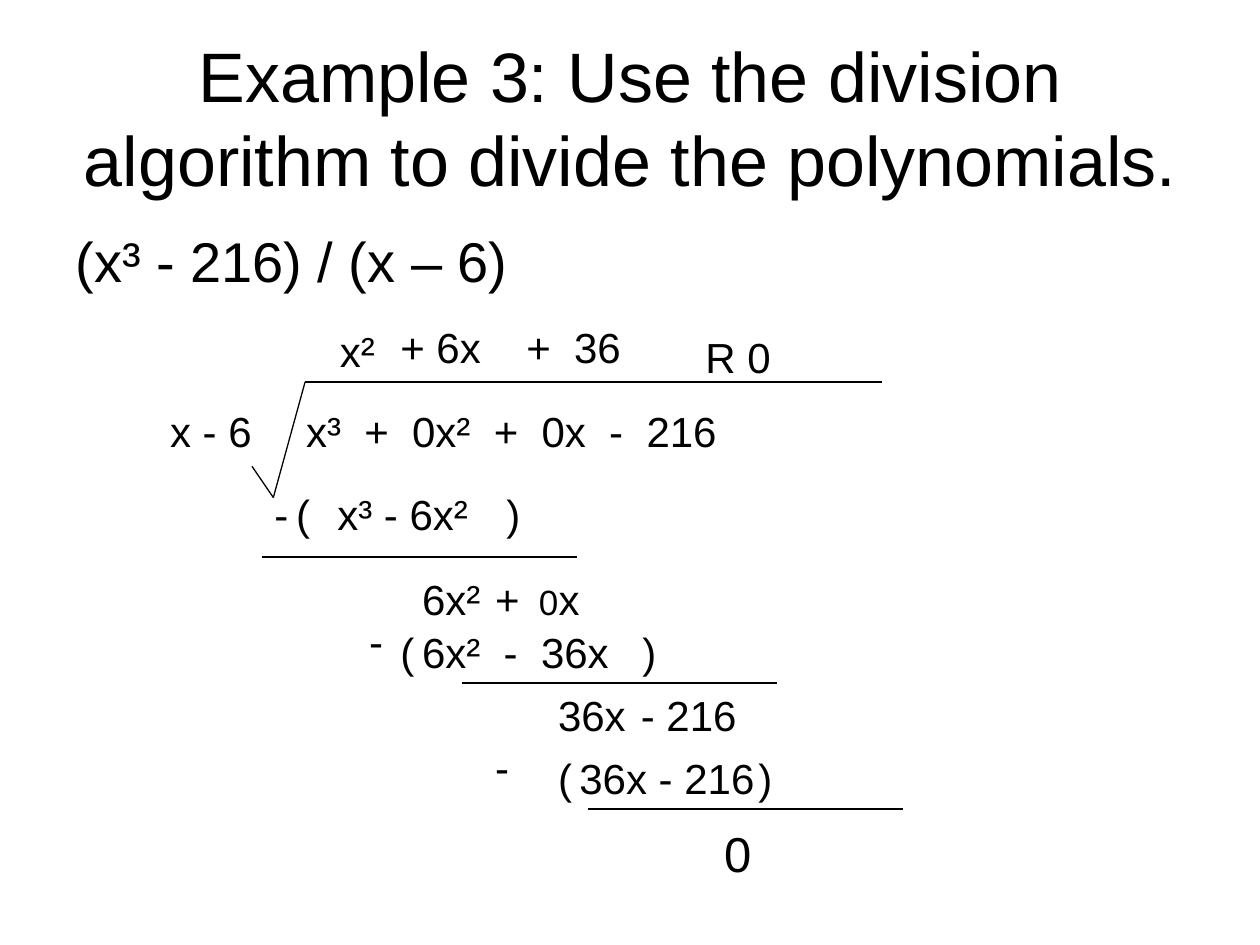
from pptx import Presentation
from pptx import util as u
from pptx.dml.color import RGBColor
from pptx.enum import shapes, text
from pptx.oxml.ns import qn
from lxml import etree


def color(value):
    return RGBColor.from_string(value)


class Board:
    font = "Arial"
    ink = "000000"
    size = 24
    line_width = 0.75

    def __init__(self, slide):
        self.s = slide

    def label(self, x, y, w, h, runs, wrap=False, align=text.PP_ALIGN.LEFT,
              anchor=text.MSO_ANCHOR.TOP, before=0):
        sp = self.s.shapes.add_textbox(u.Cm(x), u.Cm(y), u.Cm(w), u.Cm(h))
        tf = sp.text_frame
        tf.word_wrap = wrap
        tf.vertical_anchor = anchor
        if not wrap:
            tf.auto_size = text.MSO_AUTO_SIZE.SHAPE_TO_FIT_TEXT
        p = tf.paragraphs[0]
        p.alignment = align
        p.space_before = u.Pt(before)
        for words, size in runs:
            r = p.add_run()
            r.text = words
            r.font.name = self.font
            r.font.size = u.Pt(size)
            r.font.color.rgb = color(self.ink)

    def term(self, x, y, w, words):
        self.label(x, y, w, 1.27, [(words, self.size)])

    def line(self, x1, y1, x2, y2):
        c = self.s.shapes.add_connector(
            shapes.MSO_CONNECTOR.STRAIGHT,
            u.Cm(x1), u.Cm(y1), u.Cm(x2), u.Cm(y2))
        c.line.color.rgb = color(self.ink)
        c.line.width = u.Pt(self.line_width)
        etree.SubElement(c._element.spPr, qn("a:effectLst"))

    def subtraction(self, y, minus, opening, product, closing, rule):
        minus_x, minus_y = minus
        self.term(minus_x, minus_y, 0.79, "-")
        self.term(opening, y, 0.79, "(")
        x, w, words = product
        self.term(x, y, w, words)
        self.term(closing, y, 0.79, ")")
        rule_x, rule_y = rule
        self.line(rule_x, rule_y, rule_x + 6.35, rule_y)


def main():
    prs = Presentation()
    prs.slide_width, prs.slide_height = u.Cm(25.4), u.Cm(19.05)
    b = Board(prs.slides.add_slide(prs.slide_layouts[6]))

    b.label(1.27, 0.76, 22.86, 3.18,
            [("Example 3: Use the division algorithm to divide the polynomials.", 40)],
            wrap=True, align=text.PP_ALIGN.CENTER, anchor=text.MSO_ANCHOR.MIDDLE)
    b.label(1.27, 4.45, 16.71, 1.9, [("(x³ - 216) / (x – 6)", 32)],
            wrap=True, before=6.4)

    sign = [(5.08, 9.4), (5.51, 10.03), (6.15, 7.7), (17.78, 7.7)]
    for start, end in zip(sign, sign[1:]):
        b.line(*start, *end)

    terms = [
        (6.6, 6.43, 1.22, "x²"),
        (7.82, 6.35, 2.16, "+ 6x"),
        (10.36, 6.35, 2.44, "+  36"),
        (13.97, 6.55, 1.83, "R 0"),
        (3.18, 8.05, 2.18, "x - 6"),
        (5.92, 8.05, 8.86, "x³  +  0x²  +  0x  -  216"),
        (8.26, 11.43, 1.7, "6x²"),
        (11, 13.77, 1.9, "36x"),
        (12.67, 13.77, 2.46, "- 216"),
    ]
    for term in terms:
        b.term(*term)
    b.label(9.73, 11.43, 2.24, 1.27, [("+", 24), ("  0", 20), ("x", 24)])

    b.subtraction(9.73, (5.28, 9.73), 5.72, (6.55, 3.18, "x³ - 6x²"), 9.96,
                  (5.28, 11.23))
    b.subtraction(12.5, (7.19, 12.29), 7.82, (8.26, 4.32, "6x²  -  36x"), 12.7,
                  (9.32, 13.77))
    b.subtraction(15.04, (9.73, 14.83), 11, (11.43, 4.09, "36x - 216"), 15.04,
                  (11.86, 16.31))
    b.label(14.35, 16.48, 1.07, 1.45, [("0", 28)])

    prs.save("out.pptx")


if __name__ == "__main__":
    main()
